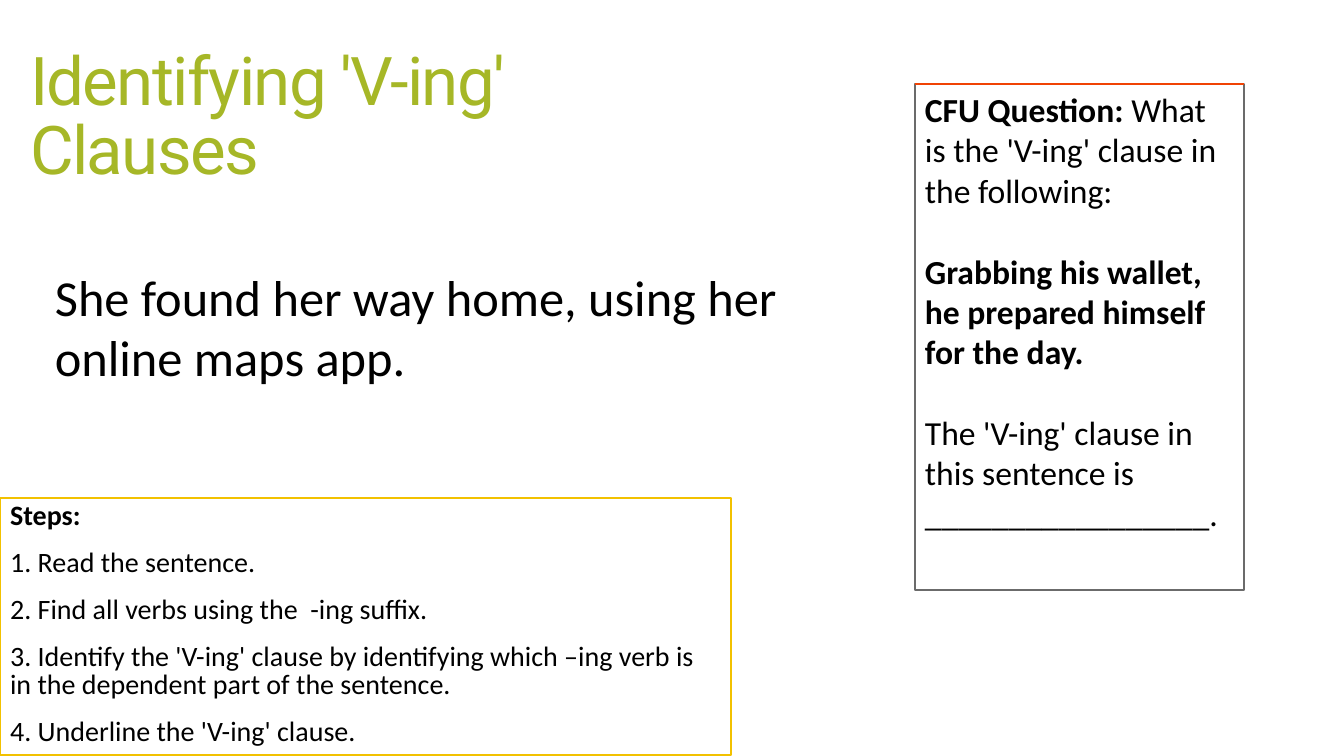
import pptx
import pptx.dml.color
import pptx.enum.shapes
import pptx.enum.text
import pptx.oxml.ns
import pptx.util
from lxml import etree

PX = 914400 / 100.8
BLACK = "000000"
WHITE = "FFFFFF"
GREEN = "A6B727"
YELLOW = "F2C100"
RED = "F04304"
GRAY = "6B6B6B"

STEPS = [
    [("Steps:", True)],
    [("1. Read the sentence.", False)],
    [("2. Find all verbs using the\u00a0 -ing suffix.", False)],
    [("3. Identify the 'V-ing' clause by identifying which –ing verb is "
      "in the dependent part of the sentence.", False)],
    [("4. Underline the 'V-ing' clause.", False)],
]
EXAMPLE = [[("She found her way home, using her online maps app.", False)]]
QUESTION = [
    [("CFU Question: ", True), ("What is the 'V-ing' clause in the following:", False)],
    [("Grabbing his wallet, he prepared himself for the day.", True)],
    [("The 'V-ing' clause in this sentence is _________________.", False)],
]


def px(length):
    return pptx.util.Emu(round(length * PX))


def color(value):
    return pptx.dml.color.RGBColor.from_string(value)


def apply(target, values):
    for name, value in values.items():
        setattr(target, name, value)


def place(shape, left, top, width, height):
    apply(shape, {"left": px(left), "top": px(top), "width": px(width), "height": px(height)})


def set_frame(frame, anchor):
    apply(frame, {
        "word_wrap": True,
        "auto_size": pptx.enum.text.MSO_AUTO_SIZE.NONE,
        "vertical_anchor": anchor,
    })


def set_box(shape, line):
    shape.fill.solid()
    shape.fill.fore_color.rgb = color(WHITE)
    shape.line.color.rgb = color(line)
    shape.line.width = pptx.util.Pt(1)


def add_run(paragraph, text, font, size, value, bold=False):
    run = paragraph.add_run()
    run.text = text
    apply(run.font, {"name": font, "size": pptx.util.Pt(size), "bold": bold})
    run.font.color.rgb = color(value)
    return run


def remove_bullet(paragraph):
    properties = paragraph._p.get_or_add_pPr()
    properties.set("marL", "0")
    properties.set("indent", "0")
    etree.SubElement(properties, pptx.oxml.ns.qn("a:buNone"))


def write_paragraphs(shape, paragraphs, size, gap=0, spacing=1.0):
    frame = shape.text_frame
    set_frame(frame, pptx.enum.text.MSO_ANCHOR.TOP)
    for index, runs in enumerate(paragraphs):
        paragraph = frame.add_paragraph() if index else frame.paragraphs[0]
        apply(paragraph, {
            "alignment": pptx.enum.text.PP_ALIGN.LEFT,
            "line_spacing": spacing,
            "space_before": pptx.util.Pt(gap if index else 0),
            "space_after": pptx.util.Pt(0),
        })
        remove_bullet(paragraph)
        for text, bold in runs:
            add_run(paragraph, text, "Calibri", size, BLACK, bold)


def write_title(title):
    place(title, 20, -18, 818, 275)
    set_frame(title.text_frame, pptx.enum.text.MSO_ANCHOR.MIDDLE)
    paragraph = title.text_frame.paragraphs[0]
    apply(paragraph, {"alignment": pptx.enum.text.PP_ALIGN.LEFT, "line_spacing": 0.85})
    for index, text in enumerate(["Identifying 'V-ing'", "Clauses"]):
        if index:
            paragraph.add_line_break()
        run = add_run(paragraph, text, "Roboto", 48, GREEN)
        run.font._element.set("spc", "-120")


def add_steps(body):
    place(body, 0, 498, 731, 257)
    set_box(body, YELLOW)
    write_paragraphs(body, STEPS, 20, gap=13, spacing=0.85)


def add_example(slide):
    example = slide.shapes.add_textbox(px(45), px(261), px(793), px(132))
    write_paragraphs(example, EXAMPLE, 36)


def add_question(slide):
    left, top, width, height = 915, 84, 329, 506
    question = slide.shapes.add_shape(
        pptx.enum.shapes.MSO_SHAPE.RECTANGLE, px(left), px(top), px(width), px(height))
    question.shadow.inherit = False
    set_box(question, GRAY)
    write_paragraphs(question, QUESTION, 24, gap=29)
    edge = slide.shapes.add_connector(
        pptx.enum.shapes.MSO_CONNECTOR.STRAIGHT, px(left), px(top), px(left + width), px(top))
    edge.line.color.rgb = color(RED)
    edge.line.width = pptx.util.Pt(1)
    etree.SubElement(edge._element.spPr, pptx.oxml.ns.qn("a:effectLst"))


def main():
    presentation = pptx.Presentation()
    apply(presentation, {"slide_width": px(1344), "slide_height": px(756)})
    slide = presentation.slides.add_slide(presentation.slide_layouts[1])
    write_title(slide.shapes.title)
    add_steps(slide.placeholders[1])
    add_example(slide)
    add_question(slide)
    presentation.save("out.pptx")


if __name__ == "__main__":
    main()
